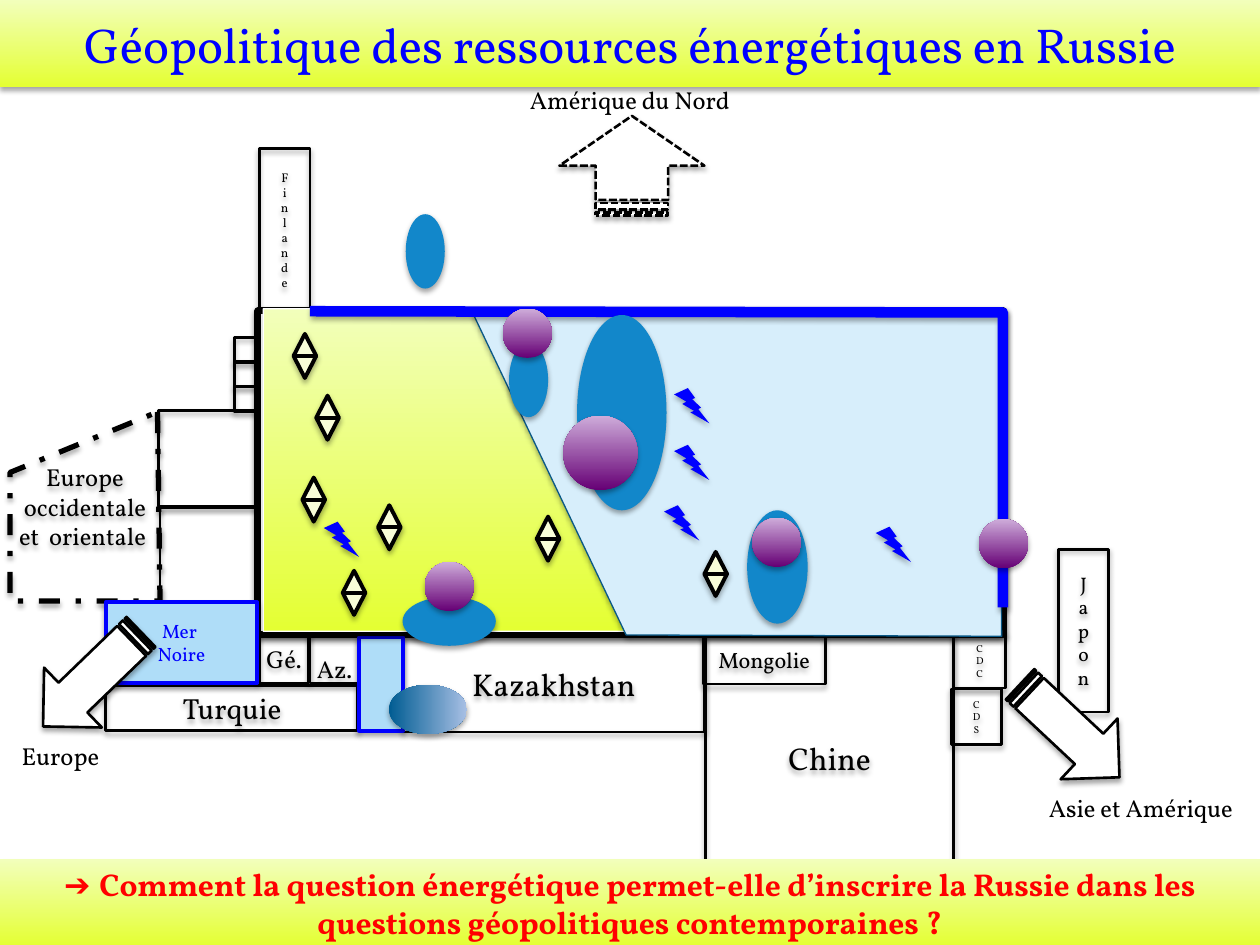
from collections import namedtuple

from lxml import etree
from pptx import Presentation
from pptx.dml.color import RGBColor
from pptx.enum.dml import MSO_LINE as Dash
from pptx.enum.shapes import MSO_SHAPE as Kind
from pptx.enum.text import MSO_ANCHOR as Anchor, PP_ALIGN as Align
from pptx.oxml.ns import qn
from pptx.util import Inches, Pt

BLACK = RGBColor(0x00, 0x00, 0x00)
WHITE = RGBColor(0xFF, 0xFF, 0xFF)
BLUE = RGBColor(0x00, 0x00, 0xFF)
RED = RGBColor(0xFF, 0x00, 0x00)
SEA = RGBColor(0xAF, 0xDD, 0xF8)
PALE_BLUE = RGBColor(0xD7, 0xEE, 0xFB)
DEEP_BLUE = RGBColor(0x09, 0x58, 0x86)
CREAM = RGBColor(0xF8, 0xFD, 0xD8)
BASIN = RGBColor(0x12, 0x87, 0xCA)
LIME = (RGBColor(0xE4, 0xFF, 0x33), RGBColor(0xF2, 0xFF, 0xBB))
CASPIAN = (RGBColor(0x00, 0x5C, 0x92), RGBColor(0xA7, 0xBF, 0xE4))
PURPLE = (RGBColor(0x66, 0x00, 0x75), RGBColor(0xCE, 0xAC, 0xDA))
FONT = "Vollkorn"

Box = namedtuple("Box", "left top width height")


def within(area, dx, dy, width, height):
    return Box(area.left + dx, area.top + dy, width, height)


def cast_shadow(shape):
    shape.shadow.inherit = False
    effects = shape.element.spPr.find(qn("a:effectLst"))
    shadow = etree.SubElement(effects, qn("a:outerShdw"), blurRad=str(Pt(3.1)),
                              dist=str(Pt(1.8)), dir="5400000", rotWithShape="0")
    color = etree.SubElement(shadow, qn("a:srgbClr"), val="000000")
    etree.SubElement(color, qn("a:alpha"), val="35000")


def paint(shape, fill=None, line=None, weight=1.5, dash=None):
    if fill is None:
        shape.fill.background()
    elif isinstance(fill, RGBColor):
        shape.fill.solid()
        shape.fill.fore_color.rgb = fill
    else:
        shape.fill.gradient()
        shape.fill.gradient_angle = 90
        for stop, color in zip(shape.fill.gradient_stops, fill):
            stop.color.rgb = color
    if line is None:
        shape.line.fill.background()
    else:
        shape.line.color.rgb = line
        shape.line.width = Pt(weight)
        if dash is not None:
            shape.line.dash_style = dash
    cast_shadow(shape)


def add_figure(page, kind, box, rotation=0, **look):
    shape = page.shapes.add_shape(kind, *map(Inches, box))
    shape.rotation = rotation
    paint(shape, **look)
    return shape


def add_outline(page, area, points, closed=True, **look):
    spots = [(Inches(area.left + x), Inches(area.top + y)) for x, y in points]
    builder = page.shapes.build_freeform(*spots[0])
    builder.add_line_segments(spots[1:], close=closed)
    shape = builder.convert_to_shape()
    paint(shape, **look)
    return shape


def write(shape, text, size, color=BLACK, anchor=Anchor.MIDDLE, tight=False, stacked=False):
    frame = shape.text_frame
    frame.text = text
    frame.word_wrap = True
    frame.vertical_anchor = anchor
    if tight:
        frame.margin_left = frame.margin_top = frame.margin_right = frame.margin_bottom = 0
    if stacked:
        frame._txBody.bodyPr.set("vert", "wordArtVert")
    for para in frame.paragraphs:
        para.alignment = Align.CENTER
        para.font.name = FONT
        para.font.size = Pt(size)
        para.font.color.rgb = color
    return frame


def add_title(page, box):
    title = page.shapes.title
    title.left, title.top, title.width, title.height = map(Inches, box)
    paint(title, LIME)
    write(title, "Géopolitique des ressources énergétiques en Russie", 28, BLUE)


def add_question(page, box):
    banner = add_figure(page, Kind.RECTANGLE, box, fill=LIME)
    para = write(banner, "➔ ", 18, RED).paragraphs[0]
    para.font.bold = True
    para.runs[0].font.name = "Arial"
    span = para.add_run()
    span.text = ("Comment la question énergétique permet-elle d’inscrire la Russie "
                 "dans les questions géopolitiques contemporaines ?")


def add_neighbours(page, area):
    add_figure(page, Kind.RECTANGLE, area, fill=WHITE, line=BLACK, weight=4.5)
    unnamed = [(-0.19, dy, 0.2, 0.2) for dy in (0.21, 0.4, 0.6)]
    unnamed += [(-0.79, 0.79, 0.79, 0.76), (-0.78, 1.56, 0.79, 0.76)]
    for place in unnamed:
        add_figure(page, Kind.RECTANGLE, within(area, *place), line=BLACK)
    stacked, tight = {"stacked": True}, {"tight": True}
    low = {"tight": True, "anchor": Anchor.BOTTOM}
    for name, size, place, style in (
        ("Chine", 18, (3.55, 2.56, 1.97, 1.97), {}),
        ("CDC", 5.8, (5.52, 2.56, 0.41, 0.43), stacked),
        ("CDS", 5.8, (5.5, 3, 0.4, 0.44), stacked),
        ("Az.", 14, (0.41, 2.56, 0.39, 0.39), low),
        ("Japon", 11.2, (6.35, 1.89, 0.4, 1.29), stacked),
        ("Kazakhstan", 18, (1.15, 2.58, 2.39, 0.76), {}),
        ("Finlande", 7.2, (0.01, -1.29, 0.4, 1.29), stacked),
        ("Mongolie", 12.6, (3.53, 2.57, 0.97, 0.39), {}),
        ("Gé.", 14, (0.01, 2.56, 0.39, 0.39), tight),
        ("Turquie", 16.6, (-1.21, 2.97, 2, 0.36), {}),
    ):
        country = add_figure(page, Kind.RECTANGLE, within(area, *place), line=BLACK)
        write(country, name, size, **style)
    europe = add_outline(page, area, [(-0.8, 0.8), (-0.78, 2.3), (-1.97, 2.3), (-1.97, 1.28)],
                         line=BLACK, weight=3, dash=Dash.DASH_DOT)
    write(europe, "Europe occidentale\net  orientale ", 14, tight=True)


def add_russia(page, area):
    water = {"fill": SEA, "line": BLUE, "weight": 2.25}
    add_figure(page, Kind.RECTANGLE, within(area, 0.8, 2.59, 0.35, 0.74), **water)
    add_figure(page, Kind.RECTANGLE, area, fill=WHITE, line=BLACK, weight=3)
    add_outline(page, area, [(0.04, -0.02), (1.71, -0.02), (2.94, 2.54), (0.04, 2.54)],
                fill=LIME, line=WHITE, weight=0.75)
    add_outline(page, area, [(1.7, 0.01), (2.92, 2.57), (5.9, 2.58), (5.88, 0.03)],
                fill=PALE_BLUE, line=DEEP_BLUE, weight=0.75)
    black_sea = add_figure(page, Kind.RECTANGLE, within(area, -1.21, 2.31, 1.2, 0.64), **water)
    write(black_sea, "Mer \nNoire", 11, BLUE)
    add_outline(page, area, [(0.41, 0), (5.91, 0.01), (5.91, 2.35)], closed=False,
                line=BLUE, weight=6)


def add_resources(page, area):
    for dx, dy in ((3.3, 0.61), (3.3, 1.06), (3.22, 1.54), (4.9, 1.71), (0.52, 1.67)):
        add_figure(page, Kind.LIGHTNING_BOLT, within(area, dx, dy, 0.28, 0.28), fill=BLUE)
    for dx, dy in ((0.46, 0.67), (0.35, 1.32), (0.95, 1.54), (0.67, 2.06),
                   (0.28, 0.18), (2.21, 1.63), (3.54, 1.91)):
        add_figure(page, Kind.FLOWCHART_SORT, within(area, dx, dy, 0.18, 0.35),
                   fill=CREAM, line=BLACK, weight=2.25)


def add_exports(page, area):
    for name, caption, arrow, rotation, dash in (
        ("Amérique du Nord", (1.62, -1.85, 2.66, 0.34), (2.57, -1.73, 0.79, 1.15), 270,
         Dash.SQUARE_DOT),
        ("Asie et Amérique", (6.06, 3.77, 1.89, 0.34), (5.9, 3, 1.08, 0.66), 43.1, None),
        ("Europe", (-2.06, 3.36, 0.98, 0.34), (-1.86, 2.59, 1.08, 0.66), 136, None),
    ):
        label = page.shapes.add_textbox(*map(Inches, within(area, *caption)))
        write(label, name, 14)
        add_figure(page, Kind.STRIPED_RIGHT_ARROW, within(area, *arrow), rotation,
                   fill=WHITE, line=BLACK, dash=dash)


def add_basins(page, area):
    for place, rotation, fill in (
        ((2.53, 0.03, 0.71, 1.55), 0, BASIN),
        ((1.32, 2.09, 0.39, 0.74), 90, BASIN),
        ((1.99, 0.25, 0.31, 0.59), 0, BASIN),
        ((3.88, 1.58, 0.48, 0.9), 0, BASIN),
        ((1.17, -0.77, 0.31, 0.59), 0, BASIN),
        ((1.15, 2.85, 0.39, 0.62), 90, CASPIAN),
    ):
        add_figure(page, Kind.OVAL, within(area, *place), rotation, fill=fill)
    for dx, dy, size in ((2.42, 0.83, 0.59), (1.32, 1.99, 0.39), (5.72, 1.65, 0.39),
                         (3.92, 1.64, 0.39), (1.94, -0.02, 0.39)):
        add_figure(page, Kind.OVAL, within(area, dx, dy, size, size), fill=PURPLE)


def main():
    deck = Presentation()
    deck.slide_width, deck.slide_height = Inches(10), Inches(7.5)
    page = deck.slides.add_slide(deck.slide_layouts[5])
    russia = Box(2.05, 2.47, 5.91, 2.56)
    add_neighbours(page, russia)
    add_russia(page, russia)
    add_title(page, Box(0, 0, 10, 0.69))
    add_question(page, Box(0, 6.82, 10, 0.69))
    add_resources(page, russia)
    add_exports(page, russia)
    add_basins(page, russia)
    deck.save("out.pptx")


if __name__ == "__main__":
    main()
